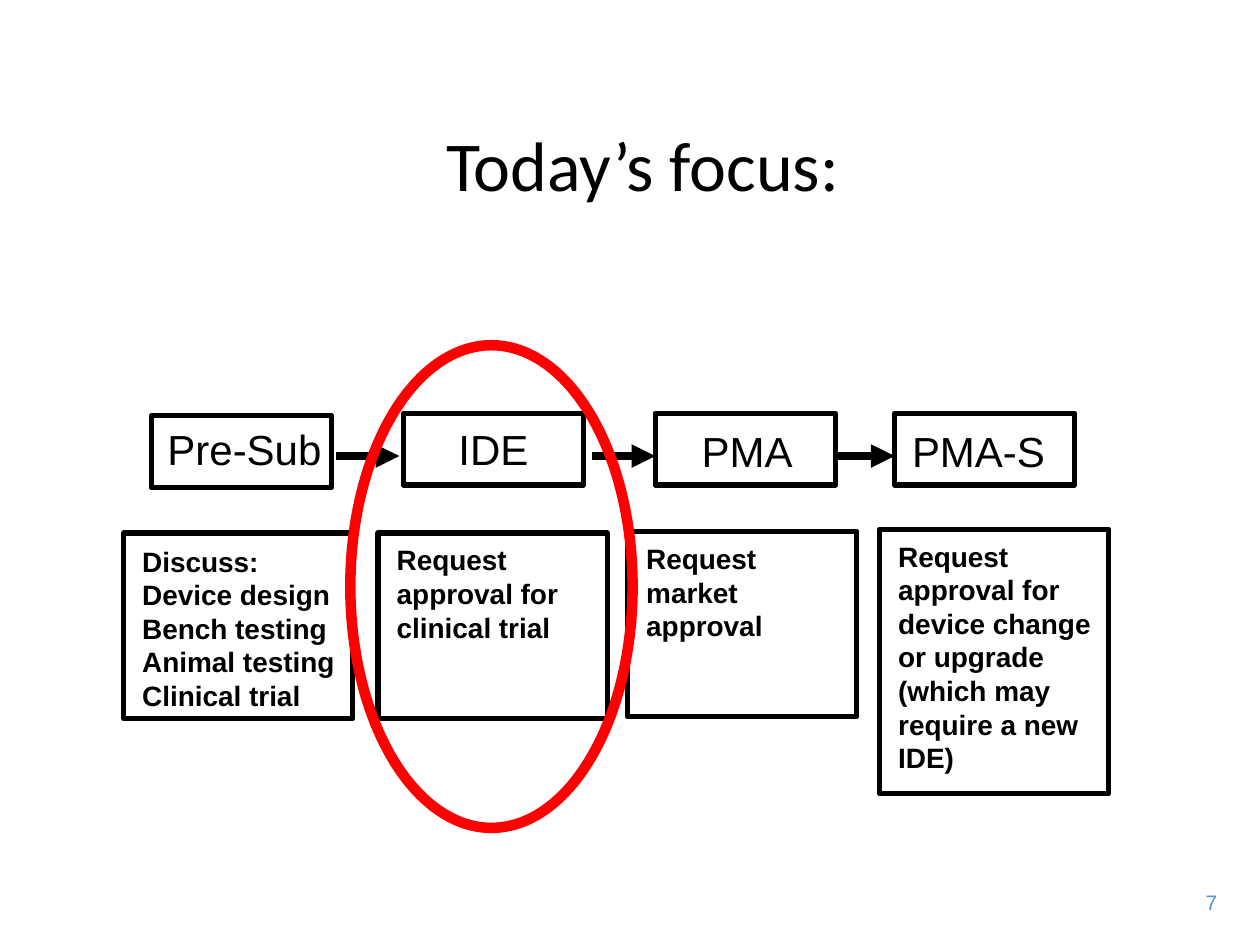
from typing import NamedTuple

from lxml.etree import SubElement
from pptx import Presentation
from pptx.dml.color import RGBColor
from pptx.enum.shapes import MSO_CONNECTOR, MSO_SHAPE
from pptx.enum.text import MSO_ANCHOR, MSO_AUTO_SIZE, PP_ALIGN
from pptx.oxml.ns import qn
from pptx.util import Pt

BLACK = "000000"
RED = "FF0000"
BLUE = "558ED5"


class Box(NamedTuple):
    left: float
    top: float
    width: float
    height: float

    def in_points(self) -> list:
        return [Pt(length) for length in self]


class Stage(NamedTuple):
    name: str
    name_area: Box
    frame_left: float
    frame_top: float
    details: list[str]
    details_area: Box
    details_frame: Box


class Arrow(NamedTuple):
    start: float
    end: float


FRAME_WIDTH, FRAME_HEIGHT = 103, 41
DETAILS_WIDTH, DETAILS_HEIGHT = 131, 106
ARROW_Y = 260.6

STAGES = [
    Stage("Pre-Sub", Box(88.6, 238.3, 103.7, 36.4), 86.4, 237.6,
          ["Discuss:", "Device design", "Bench testing", "Animal testing", "Clinical trial"],
          Box(74.2, 307.4, 124.6, 103.7),
          Box(70.6, 304.6, DETAILS_WIDTH, DETAILS_HEIGHT)),
    Stage("IDE", Box(254.9, 238.3, 54.7, 36.4), 230.4, 236.2,
          ["Request", "approval for", "clinical trial"],
          Box(219.6, 306.7, 107.3, 64.8),
          Box(216, 304.6, DETAILS_WIDTH, DETAILS_HEIGHT)),
    Stage("PMA", Box(393.8, 239.8, 66.2, 36.4), 374.4, 236.2,
          ["Request", "market", "approval"],
          Box(362.2, 306, 82.1, 64.8),
          Box(358.6, 303.5, DETAILS_WIDTH, DETAILS_HEIGHT)),
    Stage("PMA-S", Box(514.1, 239.8, 90.7, 36.4), 511.2, 236.2,
          ["Request", "approval for", "device change", "or upgrade",
           "(which may", "require a new", "IDE)"],
          Box(506.2, 304.6, 124.6, 141.8),
          Box(502.6, 302.4, DETAILS_WIDTH, 151.2)),
]
ARROWS = [Arrow(192.2, 228.2), Arrow(338.4, 374.4), Arrow(477.4, 511.2)]


def color(hex_code: str) -> RGBColor:
    return RGBColor.from_string(hex_code)


def add_text(slide, area: Box, lines: list[str], size: float, font_name: str = "Arial",
             hex_code: str = BLACK, bold: bool = False, align=PP_ALIGN.LEFT):
    """Add an unwrapped text box with one paragraph per line and return its frame."""
    frame = slide.shapes.add_textbox(*area.in_points()).text_frame
    frame.word_wrap = False
    frame.auto_size = MSO_AUTO_SIZE.SHAPE_TO_FIT_TEXT
    frame.text = "\n".join(lines)
    for paragraph in frame.paragraphs:
        paragraph.alignment = align
        paragraph.font.name = font_name
        paragraph.font.size = Pt(size)
        paragraph.font.bold = bold
        paragraph.font.color.rgb = color(hex_code)
    return frame


def add_outline(slide, preset, area: Box, hex_code: str, weight: float) -> None:
    outline = slide.shapes.add_shape(preset, *area.in_points())
    outline.shadow.inherit = False
    outline.fill.background()
    outline.line.color.rgb = color(hex_code)
    outline.line.width = Pt(weight)


def add_arrow(slide, arrow: Arrow) -> None:
    connector = slide.shapes.add_connector(
        MSO_CONNECTOR.STRAIGHT, Pt(arrow.start), Pt(ARROW_Y), Pt(arrow.end), Pt(ARROW_Y))
    connector.line.color.rgb = color(BLACK)
    connector.line.width = Pt(4.5)
    SubElement(connector.line._get_or_add_ln(), qn("a:tailEnd"), type="triangle")
    SubElement(connector._element.spPr, qn("a:effectLst"))


def add_stage(slide, stage: Stage) -> None:
    add_text(slide, stage.name_area, [stage.name], 24)
    name_frame = Box(stage.frame_left, stage.frame_top, FRAME_WIDTH, FRAME_HEIGHT)
    add_outline(slide, MSO_SHAPE.RECTANGLE, name_frame, BLACK, 3)
    add_text(slide, stage.details_area, stage.details, 16, bold=True)
    add_outline(slide, MSO_SHAPE.RECTANGLE, stage.details_frame, BLACK, 3)


def main() -> None:
    deck = Presentation()
    deck.slide_width, deck.slide_height = Pt(720), Pt(540)
    slide = deck.slides.add_slide(deck.slide_layouts[6])

    add_text(slide, Box(673.2, 504.7, 29.5, 21.6), ["7"], 12,
             hex_code=BLUE, align=PP_ALIGN.RIGHT)
    title = add_text(slide, Box(54, 48.2, 626.4, 90), ["Today’s focus:"], 40,
                     font_name="Calibri", align=PP_ALIGN.CENTER)
    title.word_wrap = True
    title.auto_size = MSO_AUTO_SIZE.NONE
    title.vertical_anchor = MSO_ANCHOR.MIDDLE

    for stage in STAGES:
        add_stage(slide, stage)
    for arrow in ARROWS:
        add_arrow(slide, arrow)
    add_outline(slide, MSO_SHAPE.OVAL, Box(200.2, 197.3, 161.3, 275.8), RED, 6)

    deck.save("out.pptx")


if __name__ == "__main__":
    main()
